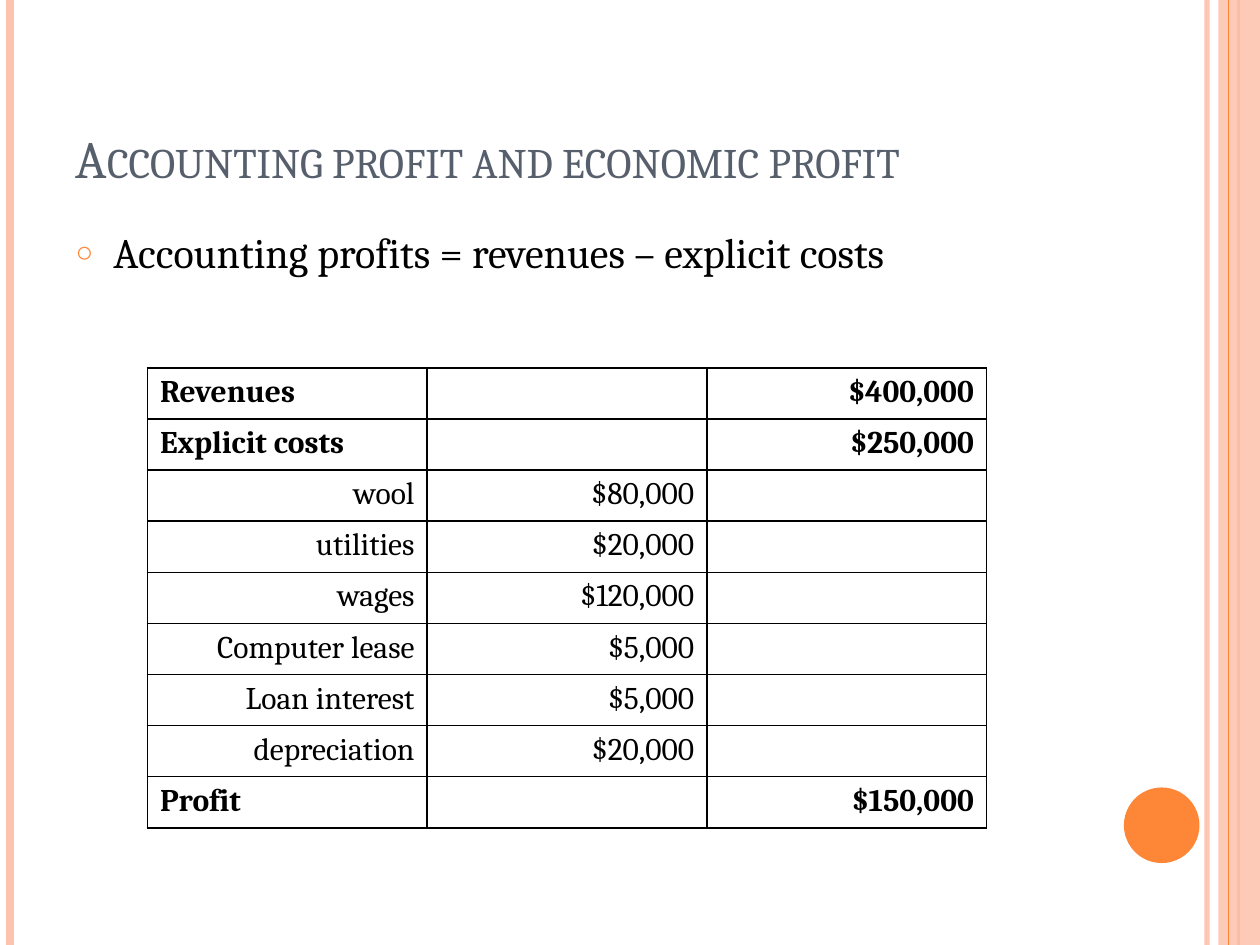
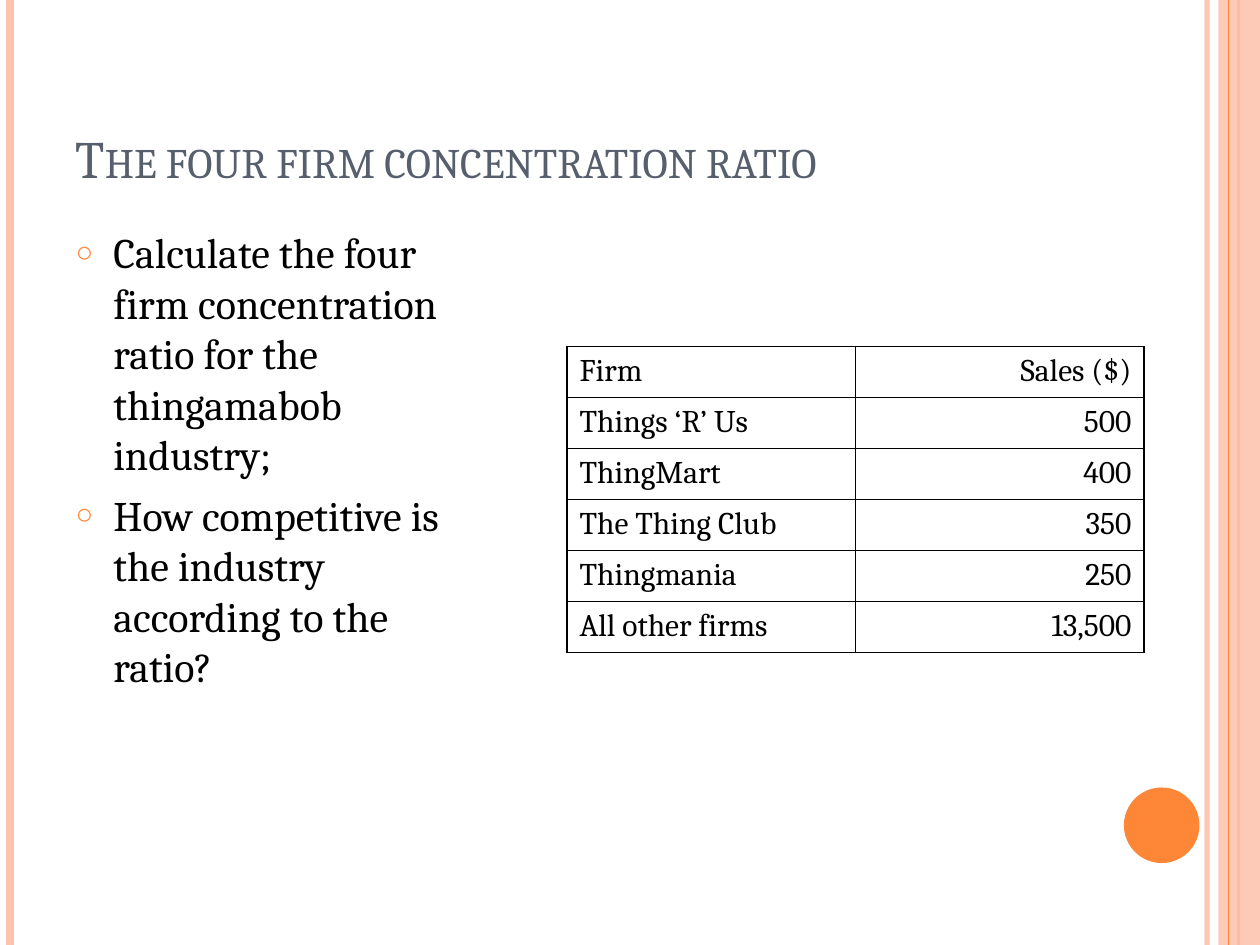
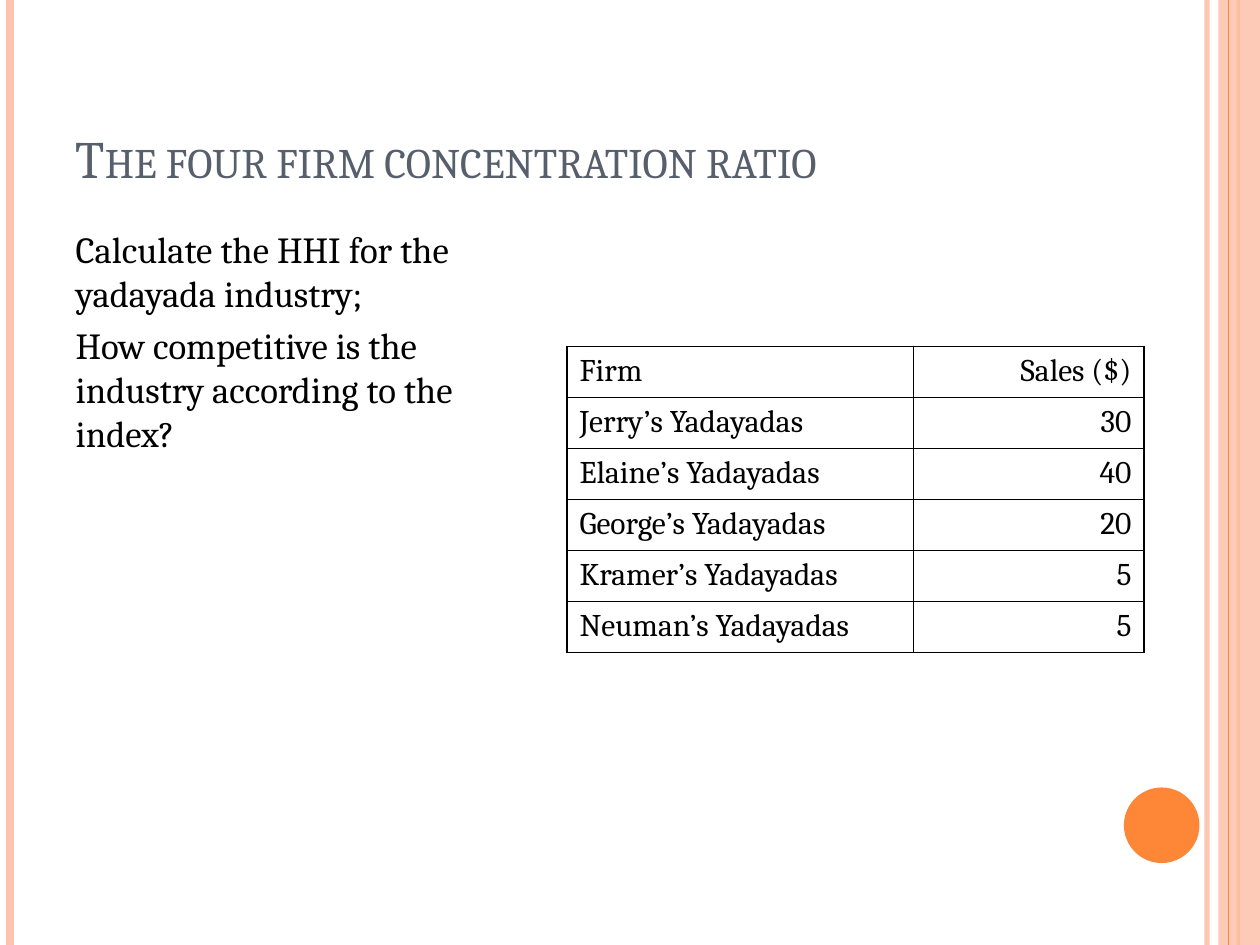
"""Build three economics slides on profit and market concentration."""

from dataclasses import dataclass
from typing import Optional

import lxml.etree
import pptx
import pptx.dml.color
import pptx.enum.shapes
import pptx.enum.text
import pptx.oxml.ns
import pptx.slide
import pptx.table
import pptx.util

FONT = "Cambria"
BLACK = "000000"
SLATE = "575F6D"
ORANGE = "FE8637"
PEACH = "FEC3AE"
SLIDE_WIDTH = 10
SLIDE_HEIGHT = 7.5
CONTENT_LEFT = 0.5
FULL_WIDTH = 8.17
HALF_WIDTH = 3.5


@dataclass(frozen=True)
class Stripe:
    """A vertical line over the full slide height."""

    x: float
    color: str
    weight: float
    opacity: int = 100


@dataclass(frozen=True)
class Block:
    """A filled decorative shape."""

    kind: pptx.enum.shapes.MSO_SHAPE
    left: float
    top: float
    width: float
    height: float
    color: str
    opacity: int = 100


@dataclass(frozen=True)
class Body:
    """The paragraphs beside or above a table and their style."""

    paragraphs: tuple[str, ...]
    width: float
    size: float = 24
    space_before: float = 6
    level: int = 0
    bullet: Optional[str] = "○"


@dataclass(frozen=True)
class Grid:
    """A ruled table; an indented label starts a detail row."""

    left: float
    top: float
    column_widths: tuple[float, ...]
    row_height: float
    rows: tuple[tuple[str, ...], ...]
    bold_rows: tuple[int, ...] = ()
    right_labels: tuple[int, ...] = ()


@dataclass(frozen=True)
class Page:
    """The content of one slide."""

    title: str
    body: Body
    grid: Grid


DECORATIONS = (
    Stripe(9.58, PEACH, 3, 93),
    Stripe(0.08, PEACH, 4.5),
    Stripe(9.83, ORANGE, 1.5),
    Block(pptx.enum.shapes.MSO_SHAPE.RECTANGLE, 9.67, 0, 0.33, SLIDE_HEIGHT, PEACH, 87),
    Stripe(9.75, ORANGE, 0.75),
    Block(pptx.enum.shapes.MSO_SHAPE.OVAL, 8.92, 6.25, 0.6, 0.6, ORANGE),
)


def sales_grid(column_widths: tuple[float, ...], *firms: tuple[str, str]) -> Grid:
    """Describe a table of firms and their sales."""
    return Grid(4.5, 2.75, column_widths, 0.405, (("Firm", "Sales ($)"), *firms))


PAGES = (
    Page(
        "Accounting profit and economic profit",
        Body(("Accounting profits = revenues – explicit costs",), FULL_WIDTH),
        Grid(
            1.17, 2.92, (2.22,) * 3, 0.405,
            (
                ("Revenues", "", "$400,000"),
                ("Explicit costs", "", "$250,000"),
                ("wool", "$80,000", ""),
                ("utilities", "$20,000", ""),
                ("wages", "$120,000", ""),
                ("Computer lease", "$5,000", ""),
                ("Loan interest", "$5,000", ""),
                ("depreciation", "$20,000", ""),
                ("Profit", "", "$150,000"),
            ),
            bold_rows=(0, 1, 8),
            right_labels=tuple(range(2, 8)),
        ),
    ),
    Page(
        "The four firm concentration ratio",
        Body(
            (
                "Calculate the four firm concentration ratio for the thingamabob industry;",
                "How competitive is the industry according to the ratio?",
            ),
            HALF_WIDTH,
        ),
        sales_grid(
            (2.29, 2.29),
            ("Things ‘R’ Us", "500"),
            ("ThingMart", "400"),
            ("The Thing Club", "350"),
            ("Thingmania", "250"),
            ("All other firms", "13,500"),
        ),
    ),
    Page(
        "The four firm concentration ratio",
        Body(
            (
                "Calculate the HHI for the yadayada industry;",
                "How competitive is the industry according to the index?",
            ),
            HALF_WIDTH, size=21, space_before=4.2, level=1, bullet=None,
        ),
        sales_grid(
            (2.75, 1.83),
            ("Jerry’s Yadayadas", "30"),
            ("Elaine’s Yadayadas", "40"),
            ("George’s Yadayadas", "20"),
            ("Kramer’s Yadayadas", "5"),
            ("Neuman’s Yadayadas", "5"),
        ),
    ),
)


def rgb(color: str) -> pptx.dml.color.RGBColor:
    """Turn a hex string into a colour."""
    return pptx.dml.color.RGBColor.from_string(color)


def add_element(parent, tag: str, **attributes: str):
    """Append a DrawingML element and return it."""
    element = lxml.etree.SubElement(parent, pptx.oxml.ns.qn(tag))
    for name, value in attributes.items():
        element.set(name, value)
    return element


def set_opacity(shape, percent: int) -> None:
    """Make the colours of a shape partly transparent."""
    if percent < 100:
        for color in list(shape._element.spPr.iter(pptx.oxml.ns.qn("a:srgbClr"))):
            add_element(color, "a:alpha", val=str(percent * 1000))


def format_runs(paragraph, size: float, color: str = BLACK, bold: bool = False) -> None:
    """Give every run of a paragraph its font."""
    for run in paragraph.runs:
        run.font.name = FONT
        run.font.size = pptx.util.Pt(size)
        run.font.bold = bold
        run.font.color.rgb = rgb(color)


def place(shape, left: float, top: float, width: float, height: float) -> None:
    """Move and size a shape."""
    shape.left, shape.top = pptx.util.Inches(left), pptx.util.Inches(top)
    shape.width, shape.height = pptx.util.Inches(width), pptx.util.Inches(height)


def draw_stripe(slide: pptx.slide.Slide, stripe: Stripe) -> None:
    """Draw one vertical line."""
    x = pptx.util.Inches(stripe.x)
    connector = slide.shapes.add_connector(
        pptx.enum.shapes.MSO_CONNECTOR.STRAIGHT, x, 0, x, pptx.util.Inches(SLIDE_HEIGHT)
    )
    connector.line.color.rgb = rgb(stripe.color)
    connector.line.width = pptx.util.Pt(stripe.weight)
    add_element(connector._element.spPr, "a:effectLst")
    set_opacity(connector, stripe.opacity)


def draw_block(slide: pptx.slide.Slide, block: Block) -> None:
    """Draw one filled shape."""
    shape = slide.shapes.add_shape(
        block.kind,
        pptx.util.Inches(block.left),
        pptx.util.Inches(block.top),
        pptx.util.Inches(block.width),
        pptx.util.Inches(block.height),
    )
    shape.shadow.inherit = False
    shape.fill.solid()
    shape.fill.fore_color.rgb = rgb(block.color)
    shape.line.fill.background()
    set_opacity(shape, block.opacity)


def draw_decorations(slide: pptx.slide.Slide) -> None:
    """Draw the bands and the disc every slide shares."""
    for decoration in DECORATIONS:
        if isinstance(decoration, Stripe):
            draw_stripe(slide, decoration)
        else:
            draw_block(slide, decoration)


def fill_title(slide: pptx.slide.Slide, text: str) -> None:
    """Write the title in small capitals."""
    title = slide.shapes.title
    place(title, CONTENT_LEFT, 0.3, FULL_WIDTH, 1.25)
    frame = title.text_frame
    frame.text = text
    frame.auto_size = pptx.enum.text.MSO_AUTO_SIZE.NONE
    frame.vertical_anchor = pptx.enum.text.MSO_ANCHOR.BOTTOM
    paragraph = frame.paragraphs[0]
    paragraph.alignment = pptx.enum.text.PP_ALIGN.LEFT
    format_runs(paragraph, 30, SLATE)
    for run in paragraph.runs:
        run.font._element.set("cap", "small")


def set_bullet(paragraph, bullet: Optional[str]) -> None:
    """Give a paragraph a hanging bullet, or neither bullet nor indent."""
    properties = paragraph._p.get_or_add_pPr()
    indent = pptx.util.Inches(0.3) if bullet else 0
    properties.set("marL", str(indent))
    properties.set("indent", str(-indent))
    if bullet:
        add_element(add_element(properties, "a:buClr"), "a:srgbClr", val=ORANGE)
        add_element(properties, "a:buSzPct", val="70000")
        add_element(properties, "a:buChar", char=bullet)
    else:
        add_element(properties, "a:buNone")


def fill_body(slide: pptx.slide.Slide, body: Body) -> None:
    """Write the body paragraphs."""
    placeholder = slide.placeholders[1]
    place(placeholder, CONTENT_LEFT, 1.75, body.width, 5.33)
    frame = placeholder.text_frame
    frame.text = "\n".join(body.paragraphs)
    frame.auto_size = pptx.enum.text.MSO_AUTO_SIZE.NONE
    for paragraph in frame.paragraphs:
        paragraph.level = body.level
        paragraph.space_before = pptx.util.Pt(body.space_before)
        set_bullet(paragraph, body.bullet)
        format_runs(paragraph, body.size)


def rule_cell(cell: pptx.table._Cell) -> None:
    """Draw the four borders of a cell and clear its fill."""
    properties = cell._tc.get_or_add_tcPr()
    for side in "LRTB":
        border = add_element(properties, f"a:ln{side}", w=str(pptx.util.Pt(1)))
        add_element(add_element(border, "a:solidFill"), "a:srgbClr", val=BLACK)
    cell.fill.background()


def draw_grid(slide: pptx.slide.Slide, grid: Grid) -> None:
    """Draw the table with labels left and amounts right."""
    table = slide.shapes.add_table(
        len(grid.rows),
        len(grid.column_widths),
        pptx.util.Inches(grid.left),
        pptx.util.Inches(grid.top),
        pptx.util.Inches(sum(grid.column_widths)),
        pptx.util.Inches(grid.row_height * len(grid.rows)),
    ).table
    table.first_row = False
    table.horz_banding = False
    for column, width in zip(table.columns, grid.column_widths):
        column.width = pptx.util.Inches(width)
    for row_index, texts in enumerate(grid.rows):
        table.rows[row_index].height = pptx.util.Inches(grid.row_height)
        for column_index, text in enumerate(texts):
            cell = table.cell(row_index, column_index)
            rule_cell(cell)
            cell.text_frame.text = text
            paragraph = cell.text_frame.paragraphs[0]
            if column_index > 0 or row_index in grid.right_labels:
                paragraph.alignment = pptx.enum.text.PP_ALIGN.RIGHT
            format_runs(paragraph, 18, bold=row_index in grid.bold_rows)


def main() -> None:
    """Build and save the presentation."""
    presentation = pptx.Presentation()
    presentation.slide_width = pptx.util.Inches(SLIDE_WIDTH)
    presentation.slide_height = pptx.util.Inches(SLIDE_HEIGHT)
    for page in PAGES:
        slide = presentation.slides.add_slide(presentation.slide_layouts[1])
        draw_decorations(slide)
        fill_title(slide, page.title)
        fill_body(slide, page.body)
        draw_grid(slide, page.grid)
    presentation.save("out.pptx")


if __name__ == "__main__":
    main()
